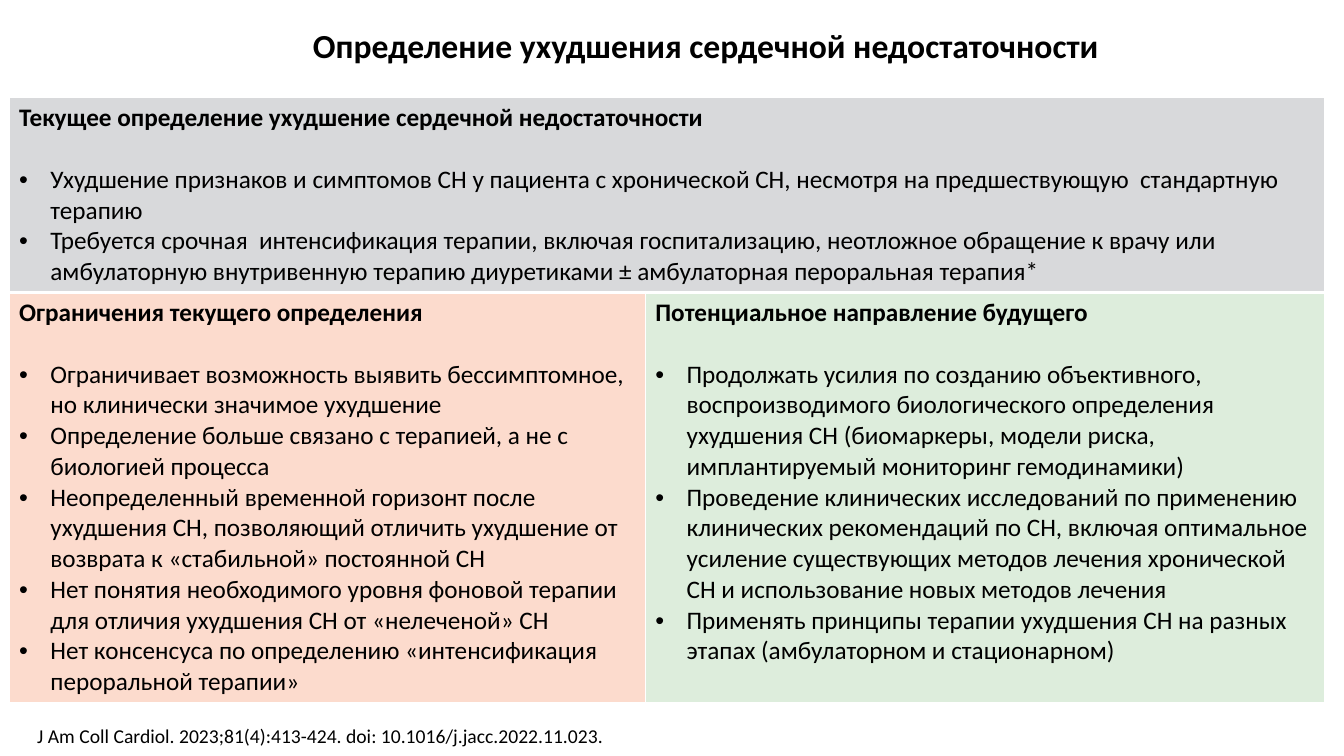
"""Build a slide on the definition of worsening heart failure."""
from dataclasses import dataclass

from lxml.etree import SubElement
from pptx import Presentation
from pptx.dml.color import RGBColor as Rgb
from pptx.enum.text import MSO_ANCHOR as Anchor, PP_ALIGN as Align
from pptx.oxml import parse_xml
from pptx.oxml.ns import nsdecls, qn
from pptx.util import Inches, Pt

TITLE = "Определение ухудшения сердечной недостаточности"
CITATION = "J Am Coll Cardiol. 2023;81(4):413-424. doi: 10.1016/j.jacc.2022.11.023."
CURRENT = ("Текущее определение ухудшение сердечной недостаточности", [
    "Ухудшение признаков и симптомов СН у пациента с хронической СН, несмотря на предшествующую  стандартную терапию",
    "Требуется срочная  интенсификация терапии, включая госпитализацию, неотложное обращение к врачу или "
    "амбулаторную внутривенную терапию диуретиками ± амбулаторная пероральная терапия*",
])
LIMITS = ("Ограничения текущего определения", [
    "Ограничивает возможность выявить бессимптомное, но клинически значимое ухудшение",
    "Определение больше связано с терапией, а не с биологией процесса",
    "Неопределенный временной горизонт после ухудшения СН, позволяющий отличить ухудшение от возврата "
    "к «стабильной» постоянной СН",
    "Нет понятия необходимого уровня фоновой терапии для отличия ухудшения СН от «нелеченой» СН",
    "Нет консенсуса по определению «интенсификация пероральной терапии»",
])
FUTURE = ("Потенциальное направление будущего", [
    "Продолжать усилия по созданию объективного, воспроизводимого биологического определения ухудшения СН "
    "(биомаркеры, модели риска, имплантируемый мониторинг гемодинамики)",
    "Проведение клинических исследований по применению клинических рекомендаций по СН, включая оптимальное "
    "усиление существующих методов лечения хронической СН и использование новых методов лечения",
    "Применять принципы терапии ухудшения СН на разных этапах (амбулаторном и стационарном)",
])


@dataclass(frozen=True)
class Theme:
    font: str = "Calibri"
    ink: str = "000000"
    rule: str = "FFFFFF"
    current: str = "D8D9DB"
    limits: str = "FCDBCD"
    future: str = "DDEDDC"
    title_size: int = 24
    body_size: int = 18
    citation_size: int = 14
    heading_gap: int = 22
    indent: float = 0.31


THEME = Theme()
COLUMNS = (6.31, 6.74)
ROWS = (1.93, 4.05)
TABLE_LEFT, TABLE_TOP = 0.09, 0.97
PANELS = [(0, 0, CURRENT, THEME.current, 3), (1, 0, LIMITS, THEME.limits, 1), (1, 1, FUTURE, THEME.future, 1)]


def write(paragraph, words, size, bold=False):
    run = paragraph.add_run()
    run.text = words
    run.font.name = THEME.font
    run.font.size = Pt(size)
    run.font.bold = bold
    run.font.color.rgb = Rgb.from_string(THEME.ink)


def add_bullet(paragraph):
    properties = paragraph._p.get_or_add_pPr()
    properties.set("marL", str(Inches(THEME.indent)))
    properties.set("indent", str(-Inches(THEME.indent)))
    SubElement(properties, qn("a:buFont"), typeface="Arial")
    SubElement(properties, qn("a:buChar"), char="•")


def draw_borders(cell, bottom):
    properties = cell._tc.get_or_add_tcPr()
    for place, (side, width) in enumerate(zip("LRTB", (1, 1, 1, bottom))):
        properties.insert(place, parse_xml(
            f'<a:ln{side} {nsdecls("a")} w="{Pt(width)}"><a:solidFill>'
            f'<a:srgbClr val="{THEME.rule}"/></a:solidFill></a:ln{side}>'))


def fill_panel(cell, panel, colour, bottom):
    heading, points = panel
    cell.fill.solid()
    cell.fill.fore_color.rgb = Rgb.from_string(colour)
    draw_borders(cell, bottom)
    first = cell.text_frame.paragraphs[0]
    first.space_after = Pt(THEME.heading_gap)
    write(first, heading, THEME.body_size, True)
    for point in points:
        paragraph = cell.text_frame.add_paragraph()
        add_bullet(paragraph)
        write(paragraph, point, THEME.body_size)


def add_line(slide, words, box, size, bold=False, align=Align.LEFT, spacing=1.0):
    frame = slide.shapes.add_textbox(*map(Inches, box)).text_frame
    frame.word_wrap = True
    frame.vertical_anchor = Anchor.MIDDLE
    paragraph = frame.paragraphs[0]
    paragraph.alignment = align
    paragraph.line_spacing = spacing
    write(paragraph, words, size, bold)


def main():
    deck = Presentation()
    deck.slide_width, deck.slide_height = Inches(13.33), Inches(7.5)
    slide = deck.slides.add_slide(deck.slide_layouts[6])

    definitions = slide.shapes.add_table(
        len(ROWS), len(COLUMNS), *map(Inches, (TABLE_LEFT, TABLE_TOP, sum(COLUMNS), sum(ROWS)))).table
    for column, width in zip(definitions.columns, COLUMNS):
        column.width = Inches(width)
    for row, height in zip(definitions.rows, ROWS):
        row.height = Inches(height)
    definitions.cell(0, 0).merge(definitions.cell(0, 1))
    for row, column, panel, colour, bottom in PANELS:
        fill_panel(definitions.cell(row, column), panel, colour, bottom)

    add_line(slide, TITLE, (0.55, 0.24, 12.9, 0.47), THEME.title_size, True, Align.CENTER, 0.9)
    add_line(slide, CITATION, (0.27, 7.13, 11.81, 0.34), THEME.citation_size)
    deck.save("out.pptx")


if __name__ == "__main__":
    main()
